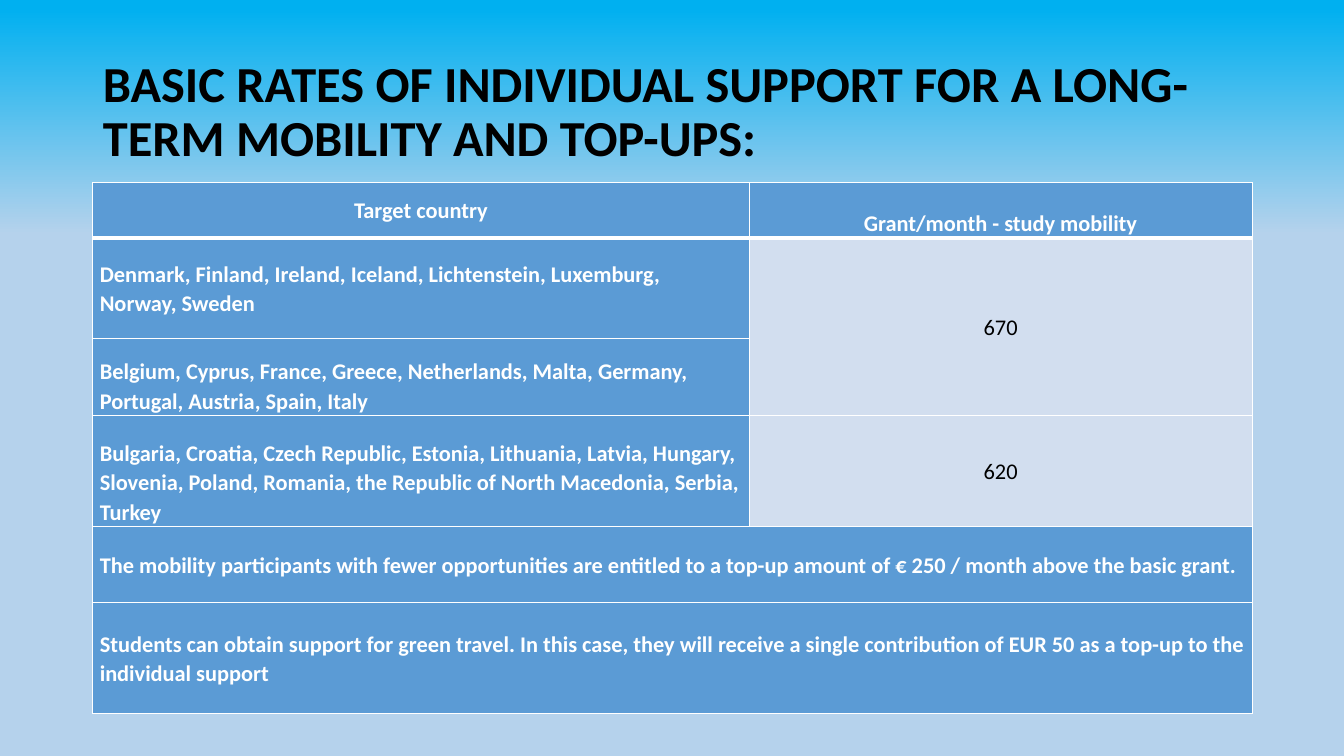
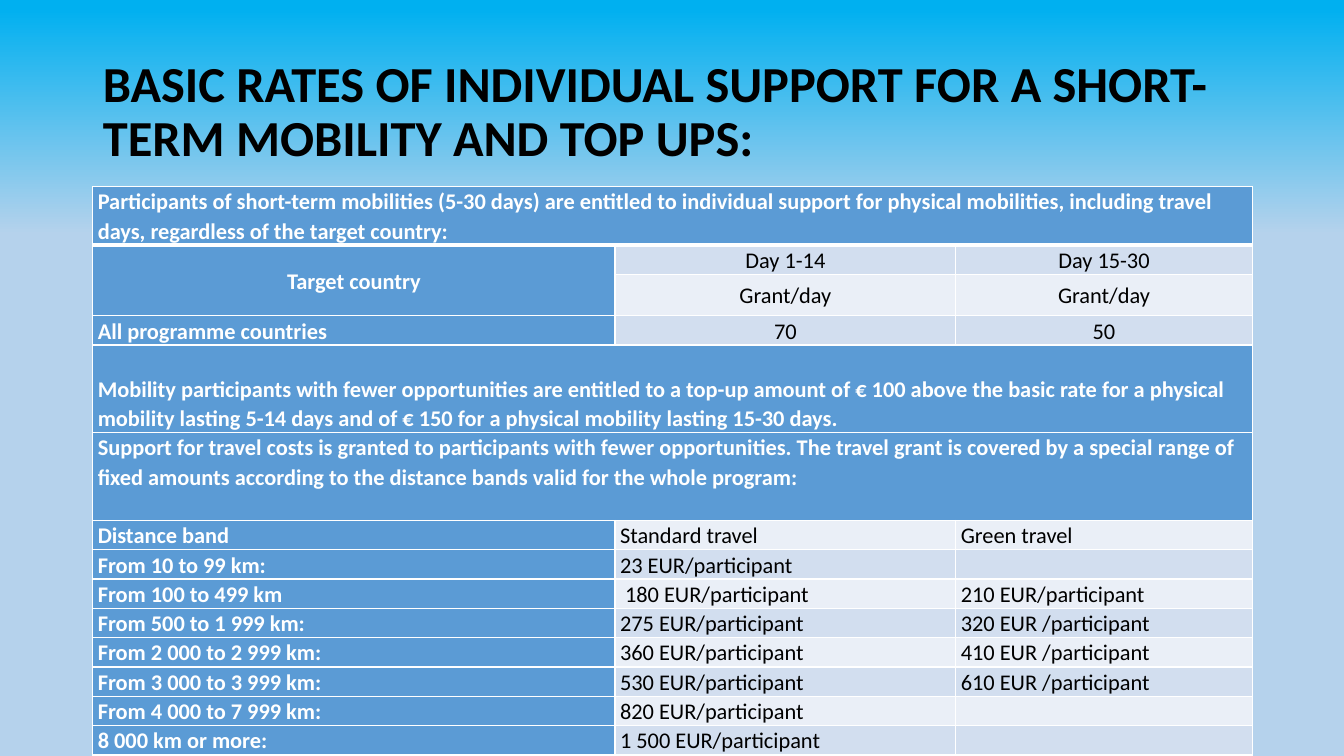
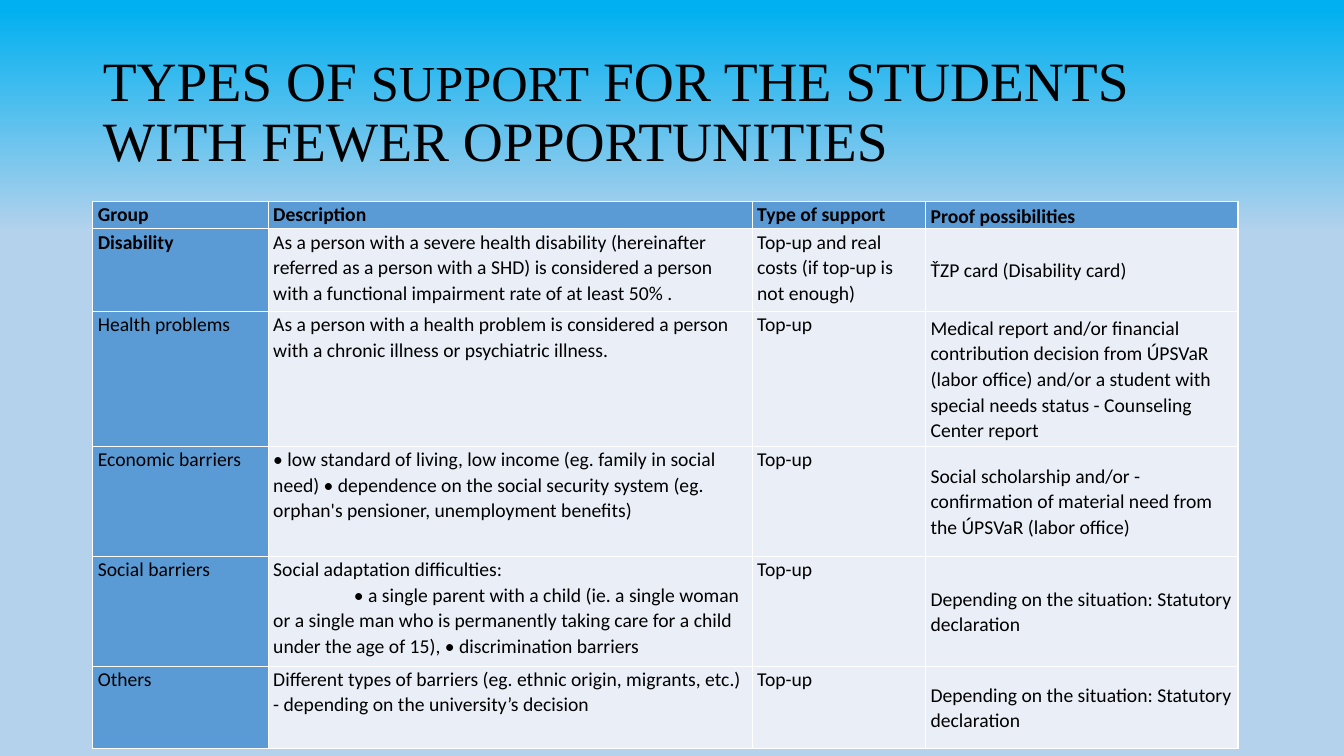
"""Build three slides of mobility grant tables."""
from dataclasses import dataclass, replace

from lxml import etree
from pptx import Presentation
from pptx import util as u
from pptx.dml.color import RGBColor
from pptx.enum import text as t
from pptx.oxml import ns

PX = 9144
ANCHOR = {"t": t.MSO_ANCHOR.TOP, "m": t.MSO_ANCHOR.MIDDLE, "b": t.MSO_ANCHOR.BOTTOM}
ALIGN = {"l": t.PP_ALIGN.LEFT, "c": t.PP_ALIGN.CENTER, "j": t.PP_ALIGN.JUSTIFY}


@dataclass(frozen=True)
class Theme:
    sky: str = "00B0F0"
    haze: str = "B5D2EC"
    blue: str = "5B9BD5"
    tint: str = "D2DEEF"
    pale: str = "EAEFF7"
    white: str = "FFFFFF"
    black: str = "000000"
    sans: str = "Calibri"
    serif: str = "Times New Roman"
    title: float = 36
    large: float = 39.6
    table: float = 16
    small: float = 14
    left: int = 92


@dataclass(frozen=True)
class Cell:
    text: str = ""
    head: bool = False
    bold: bool = False
    anc: str = "b"
    al: str = "l"
    span: tuple = (1, 1)
    after: int = 0
    dent: int = 0


@dataclass(frozen=True)
class Look:
    size: float
    ink: str
    tones: tuple
    pad: int
    rule: int


TH = Theme()
LONG = Look(TH.table, TH.white, (TH.pale, TH.tint), 7, 3)
SHORT = replace(LONG, pad=5)
KINDS = Look(TH.small, TH.black, (TH.pale, TH.pale), 5, 1)


def px(n):
    return u.Emu(n * PX)


def rgb(code):
    return RGBColor.from_string(code)


def head(text, **more):
    return Cell(text, head=True, **{"bold": True, **more})


def mid(text, **more):
    return Cell(text, anc="m", al="c", **more)


def add_run(para, text, size, font, ink, bold=False):
    run = para.add_run()
    run.text = text
    face = run.font
    face.size, face.name, face.bold = u.Pt(size), font, bold
    face.color.rgb = rgb(ink)


def paint_back(master):
    fill = master.background.fill
    fill.gradient()
    fill.gradient_angle = 270
    for stop, code, pos in zip(fill.gradient_stops, (TH.sky, TH.haze), (0.01, 0.31)):
        stop.color.rgb, stop.position = rgb(code), pos


def add_slide(prs, parts, font=TH.sans, bold=True):
    slide = prs.slides.add_slide(prs.slide_layouts[5])
    box = slide.shapes.title
    box.left, box.top, box.width, box.height = map(px, (TH.left, 40, 1150, 145))
    frame = box.text_frame
    frame.word_wrap, frame.auto_size = True, t.MSO_AUTO_SIZE.NONE
    frame.vertical_anchor = ANCHOR["m"]
    para = frame.paragraphs[0]
    para.alignment, para.line_spacing = ALIGN["l"], 0.9
    for text, size in parts:
        add_run(para, text, size, font, TH.black, bold)
    return slide


def add_edges(cell, tops, base):
    props = cell._tc.get_or_add_tcPr()
    sides = (("lnL", 1), ("lnR", 1), ("lnT", tops), ("lnB", base))
    for spot, (side, width) in enumerate(sides):
        line = etree.Element(ns.qn("a:" + side), w=str(u.Pt(width)))
        fill = etree.SubElement(line, ns.qn("a:solidFill"))
        etree.SubElement(fill, ns.qn("a:srgbClr"), val=TH.white)
        props.insert(spot, line)


def fill_cell(cell, data, look, tone):
    cell.fill.solid()
    cell.fill.fore_color.rgb = rgb(TH.blue if data.head else tone)
    cell.margin_left = cell.margin_right = px(look.pad)
    cell.margin_top = cell.margin_bottom = 0
    cell.vertical_anchor = ANCHOR[data.anc]
    frame = cell.text_frame
    for num, text in enumerate(data.text.split("\n")):
        para = frame.add_paragraph() if num else frame.paragraphs[0]
        para.alignment, para.line_spacing = ALIGN[data.al], 1.07
        para.space_after = u.Pt(data.after)
        if num and data.dent:
            para._p.get_or_add_pPr().set("indent", str(px(data.dent)))
        if text:
            ink = look.ink if data.head else TH.black
            add_run(para, text, look.size, TH.sans, ink, data.bold)
        else:
            para._p.get_or_add_endParaRPr().set("sz", str(int(look.size * 100)))


def add_grid(slide, top, cols, rows, cells, look):
    dims = (TH.left, top, sum(cols), sum(rows))
    grid = slide.shapes.add_table(len(rows), len(cols), *map(px, dims)).table
    grid.first_row = grid.horz_banding = False
    for col, width in zip(grid.columns, cols):
        col.width = px(width)
    for row, height in zip(grid.rows, rows):
        row.height = px(height)
    for r, line in enumerate(cells):
        for c, data in enumerate(line):
            cell = grid.cell(r, c)
            if data:
                fill_cell(cell, data, look, look.tones[r % 2])
                if data.span != (1, 1):
                    tall, wide = data.span
                    cell.merge(grid.cell(r + tall - 1, c + wide - 1))
            add_edges(cell, look.rule if r == 1 else 1, look.rule if r == 0 else 1)


def show_long(prs):
    title = "BASIC RATES OF INDIVIDUAL SUPPORT FOR A LONG-TERM MOBILITY AND TOP-UPS:"
    slide = add_slide(prs, [(title, TH.title)])
    wide = {"anc": "m", "al": "j", "span": (1, 2)}
    cells = [
        [head("Target country", anc="m", al="c"),
         head("Grant/month - study mobility", al="c")],
        [head("Denmark, Finland, Ireland, Iceland, Lichtenstein, Luxemburg, "
              "Norway, Sweden", anc="m"), mid("670", span=(2, 1))],
        [head("Belgium, Cyprus, France, Greece, Netherlands, Malta, Germany, "
              "Portugal, Austria, Spain, Italy"), None],
        [head("Bulgaria, Croatia, Czech Republic, Estonia, Lithuania, Latvia, "
              "Hungary, Slovenia, Poland, Romania, the Republic of North "
              "Macedonia, Serbia, Turkey"), mid("620")],
        [head("The mobility participants with fewer opportunities are entitled "
              "to a top-up amount of € 250 / month above the basic grant.", **wide),
         None],
        [head("Students can obtain support for green travel. In this case, they "
              "will receive a single contribution of EUR 50 as a top-up to the "
              "individual support", **wide), None],
    ]
    add_grid(slide, 181, (651, 499), (55, 100, 76, 110, 76, 110), cells, LONG)


def show_short(prs):
    title = "BASIC RATES OF INDIVIDUAL SUPPORT FOR A SHORT-TERM MOBILITY AND TOP UPS:"
    slide = add_slide(prs, [(title, TH.title)])
    wide = {"span": (1, 3)}
    bands = [
        ("Distance band", "Standard travel", "Green travel"),
        ("From 10 to 99 km:", "23 EUR/participant", ""),
        ("From 100 to 499 km", " 180 EUR/participant", "210 EUR/participant"),
        ("From 500 to 1 999 km:", "275 EUR/participant", "320 EUR /participant"),
        ("From 2 000 to 2 999 km:", "360 EUR/participant", "410 EUR /participant"),
        ("From 3 000 to 3 999 km:", "530 EUR/participant", "610 EUR /participant"),
        ("From 4 000 to 7 999 km:", "820 EUR/participant", ""),
        ("8 000 km or more:", "1 500 EUR/participant", ""),
    ]
    cells = [
        [head("Participants of short-term mobilities (5-30 days) are entitled to "
              "individual support for physical mobilities, including travel days, "
              "regardless of the target country:", **wide), None, None],
        [head("Target country", anc="m", al="c", span=(2, 1)),
         mid("Day 1-14"), mid("Day 15-30")],
        [None, mid("Grant/day"), mid("Grant/day")],
        [head("All programme countries"), mid("70"), mid("50")],
        [head("Mobility participants with fewer opportunities are entitled to a "
              "top-up amount of € 100 above the basic rate for a physical mobility "
              "lasting 5-14 days and of € 150 for a physical mobility lasting "
              "15-30 days.", **wide), None, None],
        [head("Support for travel costs is granted to participants with fewer "
              "opportunities. The travel grant is covered by a special range of "
              "fixed amounts according to the distance bands valid for the whole "
              "program:", anc="t", **wide), None, None],
    ]
    cells += [[head(band), Cell(base), Cell(green)] for band, base, green in bands]
    rows = (58, 29, 41, 29, 87, 87) + (29,) * len(bands)
    add_grid(slide, 185, (518, 338, 294), rows, cells, SHORT)


def show_kinds(prs):
    parts = [("TYPES OF ", TH.large), ("SUPPORT", TH.title),
             (" FOR THE STUDENTS WITH FEWER OPPORTUNITIES", TH.large)]
    slide = add_slide(prs, parts, TH.serif, False)
    state = "Depending on the situation: Statutory declaration"
    groups = [
        ("Disability",
         "As a person with a severe health disability (hereinafter referred as a "
         "person with a SHD) is considered a person with a functional impairment "
         "rate of at least 50% .",
         "Top-up and real costs (if top-up is not enough)",
         "ŤZP card (Disability card)"),
        ("Health problems",
         "As a person with a health problem is considered a person with a chronic "
         "illness or psychiatric illness.",
         "Top-up",
         "Medical report and/or financial contribution decision from ÚPSVaR (labor "
         "office) and/or a student with special needs status - Counseling Center "
         "report"),
        ("Economic barriers",
         "• low standard of living, low income (eg. family in social need) "
         "• dependence on the social security system (eg. orphan's pensioner, "
         "unemployment benefits)",
         "Top-up",
         "Social scholarship and/or - confirmation of material need from the "
         "ÚPSVaR (labor office)"),
        ("Social barriers",
         "Social adaptation difficulties:\n• a single parent with a child (ie. a "
         "single woman or a single man who is permanently taking care for a child "
         "under the age of 15), • discrimination barriers",
         "Top-up", state),
        ("Others",
         "Different types of barriers (eg. ethnic origin, migrants, etc.) - "
         "depending on the university’s decision",
         "Top-up", state),
    ]
    names = ("Group", "Description", "Type of support")
    cells = [[head(name, anc="t") for name in names]
             + [head("Proof possibilities", after=8)]]
    for num, (group, about, kind, proof) in enumerate(groups):
        cells.append([head(group, anc="t", bold=num == 0),
                      Cell(about, anc="t", dent=80),
                      Cell(kind, anc="t"),
                      Cell(proof, anc="m", after=8)])
    rows = (27, 82, 134, 109, 109, 82)
    add_grid(slide, 200, (174, 480, 172, 310), rows, cells, KINDS)


def main():
    prs = Presentation()
    prs.slide_width, prs.slide_height = px(1333), px(750)
    paint_back(prs.slide_master)
    show_long(prs)
    show_short(prs)
    show_kinds(prs)
    prs.save("out.pptx")


if __name__ == "__main__":
    main()
